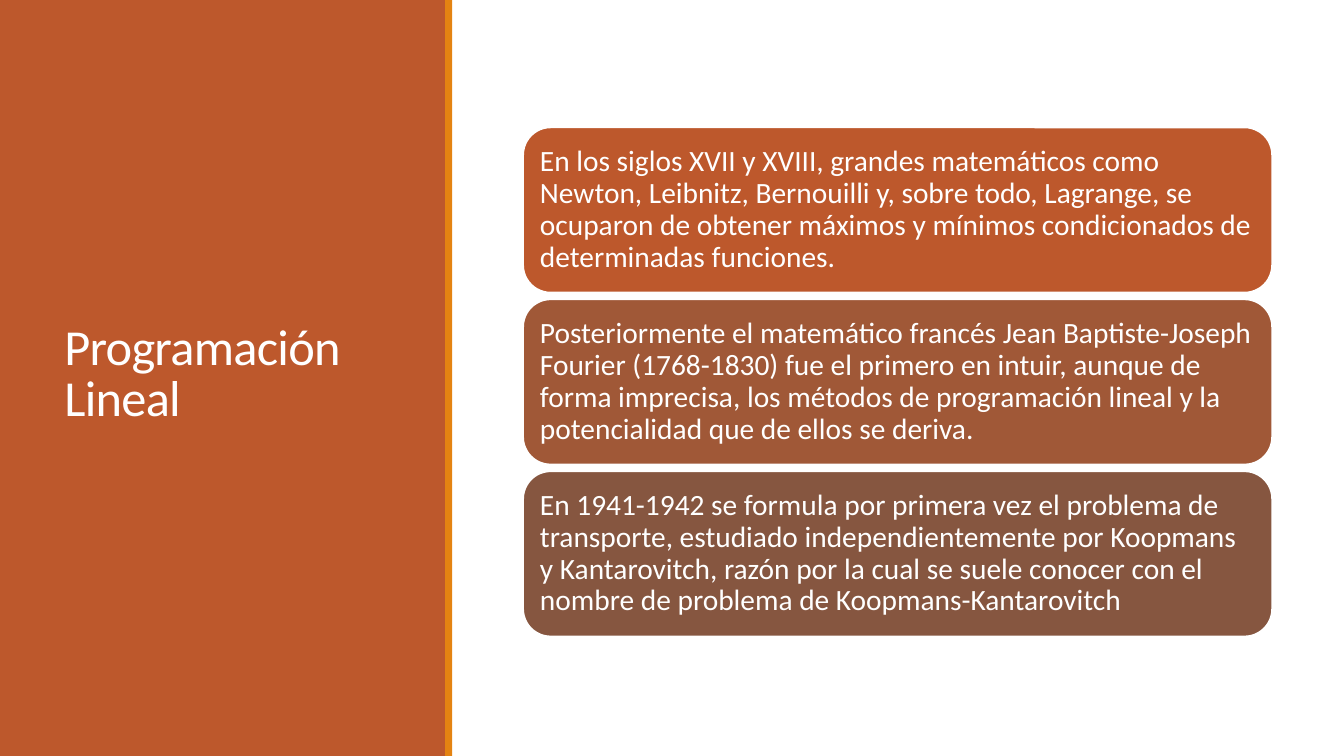
from dataclasses import dataclass

from pptx import Presentation
from pptx.dml.color import RGBColor
from pptx.enum.shapes import MSO_SHAPE
from pptx.enum.text import MSO_ANCHOR, PP_ALIGN
from pptx.util import Pt


@dataclass(frozen=True)
class Theme:
    font: str = "Calibri"
    white: str = "FFFFFF"
    rust: str = "BD582C"
    orange: str = "E48312"
    cards: tuple = ("BD582C", "A05837", "865640")
    title_size: int = 36
    body_size: int = 21


class SlideBuilder:
    def __init__(self, prs, theme):
        self.theme = theme
        self.s = prs.slides.add_slide(prs.slide_layouts[6])

    def panel(self, box, color, kind=MSO_SHAPE.RECTANGLE):
        sp = self.s.shapes.add_shape(kind, *map(Pt, box))
        sp.shadow.inherit = False
        sp.fill.solid()
        sp.fill.fore_color.rgb = RGBColor.from_string(color)
        sp.line.fill.background()
        return sp

    def add_text(self, sp, text, size, line_spacing, inset):
        tf = sp.text_frame
        frame_format = {"word_wrap": True, "vertical_anchor": MSO_ANCHOR.MIDDLE}
        for side in ("left", "right", "top", "bottom"):
            frame_format[f"margin_{side}"] = Pt(inset)
        p = tf.paragraphs[0]
        r = p.add_run()
        r.text = text
        r.font.color.rgb = RGBColor.from_string(self.theme.white)
        formats = (
            (tf, frame_format),
            (p, {"alignment": PP_ALIGN.LEFT, "line_spacing": line_spacing}),
            (r.font, {"name": self.theme.font, "size": Pt(size)}),
        )
        for target, values in formats:
            for name, value in values.items():
                setattr(target, name, value)
        return r

    def title(self, box, text):
        sp = self.s.shapes.add_textbox(*map(Pt, box))
        r = self.add_text(sp, text, self.theme.title_size, 0.85, 7.2)
        r.font._element.set("spc", "-50")

    def card(self, box, color, text):
        sp = self.panel(box, color, MSO_SHAPE.ROUNDED_RECTANGLE)
        sp.line.color.rgb = RGBColor.from_string(self.theme.white)
        sp.line.width = Pt(1.25)
        self.add_text(sp, text, self.theme.body_size, 0.9, 6.3)


MILESTONES = (
    "En los siglos XVII y XVIII, grandes matemáticos como Newton, Leibnitz, "
    "Bernouilli y, sobre todo, Lagrange, se ocuparon de obtener máximos y "
    "mínimos condicionados de determinadas funciones.",
    "Posteriormente el matemático francés Jean Baptiste-Joseph Fourier "
    "(1768-1830) fue el primero en intuir, aunque de forma imprecisa, los "
    "métodos de programación lineal y la potencialidad que de ellos se deriva.",
    "En 1941-1942 se formula por primera vez el problema de transporte, "
    "estudiado independientemente por Koopmans y Kantarovitch, razón por la "
    "cual se suele conocer con el nombre de problema de Koopmans-Kantarovitch",
)


def main():
    prs = Presentation()
    prs.slide_width, prs.slide_height = Pt(960), Pt(540)
    theme = Theme()
    slide = SlideBuilder(prs, theme)
    slide.panel((0, 0, 319, 540), theme.rust)
    slide.title((38.9, 41, 242.6, 454.3), "Programación Lineal")
    slide.panel((318, 0, 5, 540), theme.orange)
    card_top, card_pitch = 91, 122.8
    for i, (color, text) in enumerate(zip(theme.cards, MILESTONES)):
        slide.card((373.7, card_top + i * card_pitch, 535, 118), color, text)
    prs.save("out.pptx")


if __name__ == "__main__":
    main()
